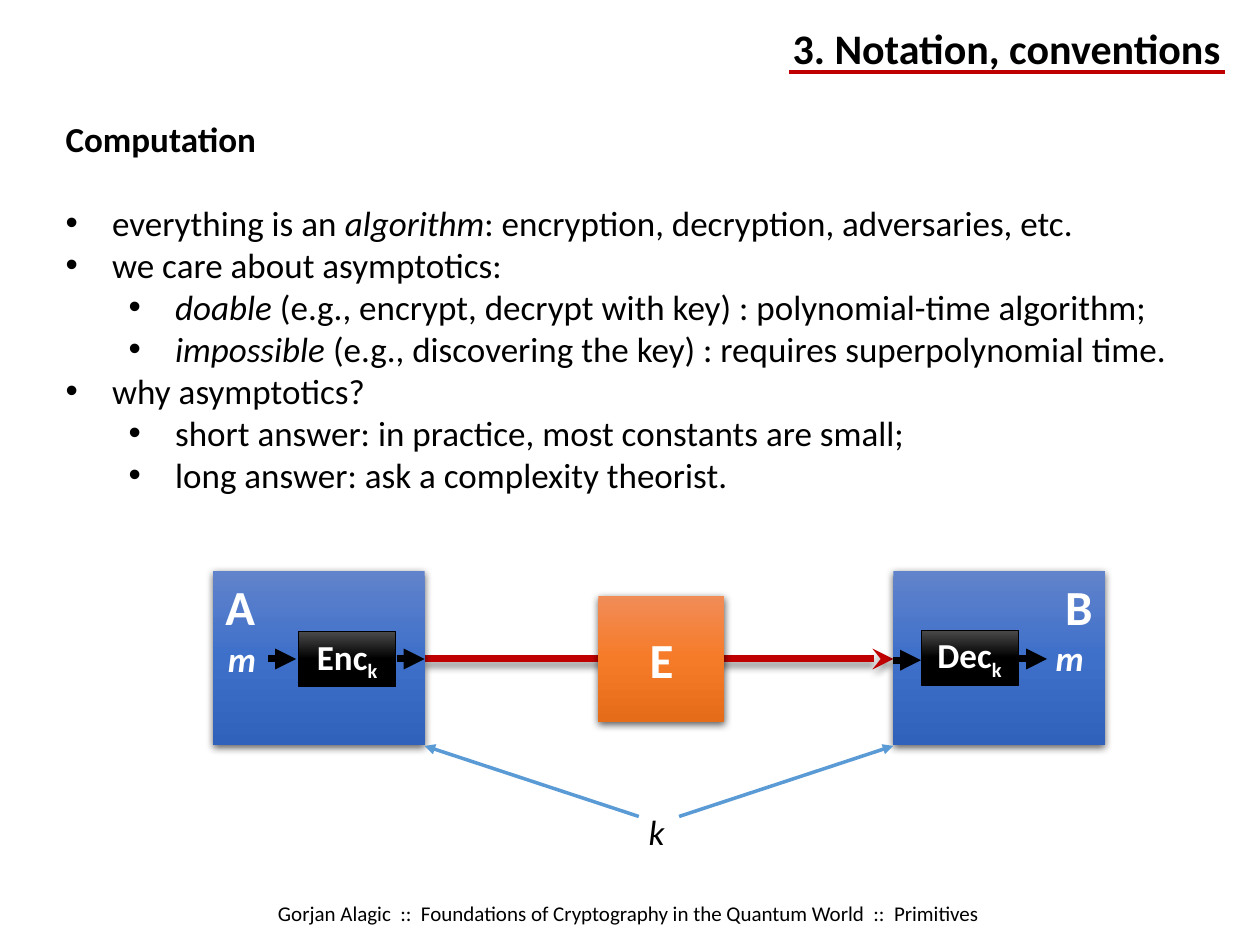
import copy
from dataclasses import dataclass

import pptx
import pptx.dml.color
import pptx.enum.shapes
import pptx.enum.text
import pptx.oxml
import pptx.oxml.ns
import pptx.util

Inches = pptx.util.Inches
Pt = pptx.util.Pt
Align = pptx.enum.text.PP_ALIGN
Anchor = pptx.enum.text.MSO_ANCHOR
qn = pptx.oxml.ns.qn


@dataclass(frozen=True)
class Theme:
    font: str = "Calibri"
    ink: str = "000000"
    light: str = "FFFFFF"
    channel: str = "C00000"
    key: str = "5B9BD5"
    party: tuple = ("6183CB", "3E70CA", "3062BB")
    eavesdropper: tuple = ("F18C57", "F67B28", "E56C19")
    machine: tuple = ("4B4B4B", "000000", "000000")
    title: int = 24
    body: int = 20
    label: int = 28
    footer: int = 12


def rgb(value):
    return pptx.dml.color.RGBColor.from_string(value)


def drawing_element(tag, **attributes):
    element = pptx.oxml.parse_xml(f"<a:{tag} {pptx.oxml.ns.nsdecls('a')}/>")
    for name, value in attributes.items():
        element.set(name, str(value))
    return element


class Composer:
    def __init__(self, slide, theme):
        self.slide = slide
        self.theme = theme

    def add_runs(self, paragraph, runs, size, color, bold=False):
        for text, style in runs:
            run = paragraph.add_run()
            run.text = text
            run.font.name = self.theme.font
            run.font.size = Pt(size)
            run.font.bold = bold
            run.font.italic = style == "italic"
            run.font.color.rgb = rgb(color)
            if style == "subscript":
                run.font._element.set("baseline", "-25000")

    def place(self, placeholder, left, top, width, height, wrap=True):
        placeholder.left, placeholder.top = Inches(left), Inches(top)
        placeholder.width, placeholder.height = Inches(width), Inches(height)
        frame = placeholder.text_frame
        frame.auto_size = pptx.enum.text.MSO_AUTO_SIZE.NONE
        frame.vertical_anchor = Anchor.TOP
        frame.word_wrap = wrap
        return frame

    def title(self, text, *bounds):
        paragraph = self.place(self.slide.shapes.title, *bounds, wrap=False).paragraphs[0]
        paragraph.alignment = Align.LEFT
        self.add_runs(paragraph, [(text, "")], self.theme.title, self.theme.ink, True)

    def body(self, heading, points, *bounds):
        frame = self.place(self.slide.placeholders[1], *bounds)
        first = frame.paragraphs[0]
        self.bullet(first, None)
        first.space_after = Pt(24)
        self.add_runs(first, [(heading, "")], self.theme.body, self.theme.ink, True)
        for level, runs in points:
            point = frame.add_paragraph()
            self.bullet(point, level)
            self.add_runs(point, runs, self.theme.body, self.theme.ink)

    def bullet(self, paragraph, level):
        paragraph.space_before = Pt(0)
        properties = paragraph._p.get_or_add_pPr()
        if level is None:
            properties.set("marL", "0")
            properties.set("indent", "0")
            properties.append(drawing_element("buNone"))
            return
        paragraph.level = level
        properties.set("marL", str(Inches(0.37 + 0.5 * level)))
        properties.set("indent", str(Inches(-0.37)))
        properties.append(drawing_element("buFont", typeface="Arial"))
        properties.append(drawing_element("buChar", char="•"))

    def text(self, runs, left, top, width, height, size, color, bold=False, align=Align.LEFT, wrap=False):
        area = self.slide.shapes.add_textbox(*map(Inches, (left, top, width, height)))
        area.text_frame.word_wrap = wrap
        paragraph = area.text_frame.paragraphs[0]
        paragraph.alignment = align
        self.add_runs(paragraph, runs, size, color, bold)

    def shadow(self, effects, alpha, blur, distance):
        cast = drawing_element("outerShdw", blurRad=Pt(blur), dist=Pt(distance), dir=5400000,
                               algn="ctr", rotWithShape=0)
        tint = drawing_element("srgbClr", val=self.theme.ink)
        tint.append(drawing_element("alpha", val=alpha * 1000))
        cast.append(tint)
        effects.append(cast)

    def box(self, runs, left, top, width, height, gradient, size, align=Align.CENTER,
            anchor=Anchor.MIDDLE, outlined=False):
        block = self.slide.shapes.add_shape(
            pptx.enum.shapes.MSO_SHAPE.RECTANGLE, *map(Inches, (left, top, width, height)))
        block.fill.gradient()
        block.fill.gradient_angle = 270
        properties = block._element.spPr
        stops = properties.find(".//" + qn("a:gsLst"))
        stops.append(copy.deepcopy(stops[0]))
        for stop, color, position in zip(block.fill.gradient_stops, gradient, (0, 0.5, 1)):
            stop.color.rgb = rgb(color)
            stop.position = position
        block.shadow.inherit = False
        if outlined:
            block.line.color.rgb = rgb(self.theme.ink)
            block.line.width = Pt(0.5)
        else:
            block.line.fill.background()
            self.shadow(properties.find(qn("a:effectLst")), 63, 4.5, 1.5)
        frame = block.text_frame
        frame.word_wrap = True
        frame.vertical_anchor = anchor
        paragraph = frame.paragraphs[0]
        paragraph.alignment = align
        self.add_runs(paragraph, runs, size, self.theme.light, True)

    def line(self, start, end, color, width, head=None, shadowed=False):
        link = self.slide.shapes.add_connector(
            pptx.enum.shapes.MSO_CONNECTOR.STRAIGHT, *map(Inches, start + end))
        link.line.color.rgb = rgb(color)
        link.line.width = Pt(width)
        if head:
            link.line._get_or_add_ln().append(drawing_element("tailEnd", type=head))
        effects = drawing_element("effectLst")
        link._element.spPr.append(effects)
        if shadowed:
            self.shadow(effects, 40, 4, 3)


def main():
    deck = pptx.Presentation()
    deck.slide_width, deck.slide_height = Inches(10), Inches(7.5)
    theme = Theme()
    page = Composer(deck.slides.add_slide(deck.slide_layouts[1]), theme)

    page.line((9.72, 0.57), (6.26, 0.57), theme.channel, 2.25)
    page.title("3. Notation, conventions", 6.19, 0.13, 3.63, 0.5)
    page.text([("Gorjan Alagic  ::  Foundations of Cryptography in the Quantum World  ::  Primitives", "")],
              0.27, 7.1, 9.44, 0.3, theme.footer, theme.ink, align=Align.CENTER, wrap=True)
    page.body("Computation", [
        (0, [("everything is an ", ""), ("algorithm", "italic"),
             (": encryption, decryption, adversaries, etc.", "")]),
        (0, [("we care about asymptotics:", "")]),
        (1, [("doable ", "italic"),
             ("(e.g., encrypt, decrypt with key) : polynomial-time algorithm;", "")]),
        (1, [("impossible", "italic"),
             (" (e.g., discovering the key) : requires superpolynomial time.", "")]),
        (0, [("why asymptotics?", "")]),
        (1, [("short answer: in practice, most constants are small;", "")]),
        (1, [("long answer: ask a complexity theorist.", "")]),
    ], 0.42, 0.88, 9.3, 3.43)

    page.line((3.37, 5.23), (7.09, 5.23), theme.channel, 4, "stealth", shadowed=True)
    page.box([("E", "")], 4.75, 4.73, 1, 1, theme.eavesdropper, theme.label)

    parties = [
        ("A", 1.69, Align.LEFT, "Enc", 2.37, 5.01, 1.71, ((2.13, 5.23), (3.15, 5.23))),
        ("B", 7.09, Align.RIGHT, "Dec", 7.31, 5, 8.28, ((7.09, 5.24), (8.09, 5.23))),
    ]
    for party, left, align, machine, machine_left, row, message_left, arrows in parties:
        page.box([(party, "")], left, 4.53, 1.68, 1.38, theme.party, theme.label, align, Anchor.TOP)
        page.text([("m", "italic")], message_left, row, 0.43, 0.44, theme.body, theme.light, bold=True)
        page.box([(machine, ""), ("k", "subscript")], machine_left, row, 0.77, 0.44,
                 theme.machine, theme.body, outlined=True)
        for x, y in arrows:
            page.line((x, y), (x + 0.22, y), theme.ink, 4, "triangle")

    page.text([("k", "italic")], 5.05, 6.38, 0.33, 0.44, theme.body, theme.ink)
    for start, corner in ((5.07, 3.37), (5.39, 7.09)):
        page.line((start, 6.48), (corner, 5.92), theme.key, 2, "triangle")

    deck.save("out.pptx")


if __name__ == "__main__":
    main()
